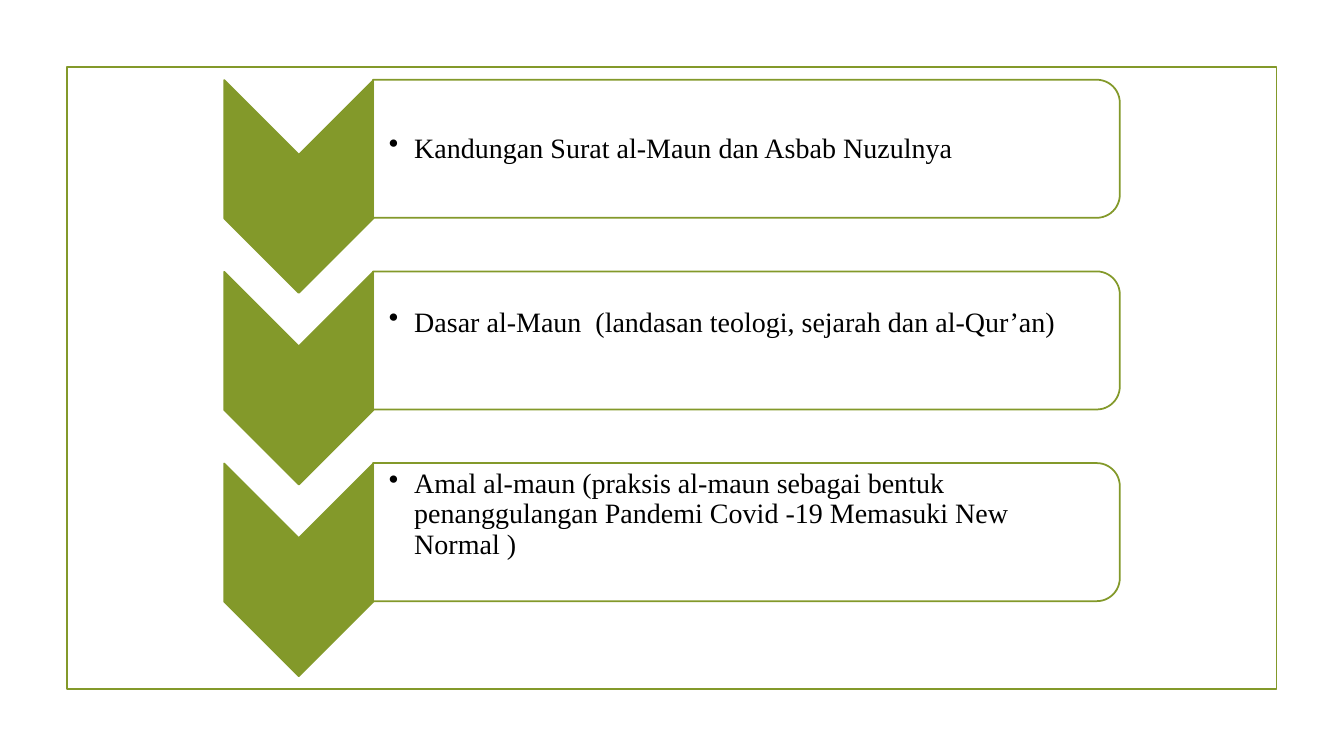
from lxml import etree
from pptx import Presentation
from pptx.dml.color import RGBColor
from pptx.enum.shapes import MSO_SHAPE
from pptx.enum.text import MSO_ANCHOR, PP_ALIGN
from pptx.oxml.ns import qn
from pptx.util import Cm, Pt

RECT = MSO_SHAPE.RECTANGLE
CHEVRON = MSO_SHAPE.CHEVRON
BAND = MSO_SHAPE.ROUND_2_SAME_RECTANGLE
MIDDLE = MSO_ANCHOR.MIDDLE
LEFT = PP_ALIGN.LEFT

GREEN, WHITE, BLACK = "83992A", "FFFFFF", "000000"
FONT = "Times New Roman"
PITCH = 4.83  # cm from one row to the next

# Text and bottom inset (cm) of each row
ROWS = [
    ("Kandungan Surat al-Maun dan Asbab Nuzulnya", 0.03),
    ("Dasar al-Maun  (landasan teologi, sejarah dan al-Qur’an)", 0.92),
    ("Amal al-maun (praksis al-maun sebagai bentuk penanggulangan "
     "Pandemi Covid -19 Memasuki New Normal )", 0.92),
]


def color(code):
    return RGBColor.from_string(code)


def add_box(slide, kind, x, y, w, h, fill=None, turn=0):
    """Add an outlined shape centred on x, y."""
    box = slide.shapes.add_shape(
        kind, Cm(x - w / 2), Cm(y - h / 2), Cm(w), Cm(h))
    box.rotation = turn
    box.shadow.inherit = False
    box.line.color.rgb = color(GREEN)
    box.line.width = Pt(1.25)
    if fill:
        box.fill.solid()
        box.fill.fore_color.rgb = color(fill)
    else:
        box.fill.background()
    return box


def set_alpha(shape, percent):
    tone = shape.fill._xPr.find(qn("a:solidFill"))[0]
    etree.SubElement(tone, qn("a:alpha"), val=str(percent * 1000))


def add_bullet(para):
    props = para._p.get_or_add_pPr()
    props.set("marL", str(Cm(0.64)))
    props.set("indent", str(-Cm(0.64)))
    etree.SubElement(props, qn("a:buChar"), char="•")


def add_label(slide, text, y, bottom):
    label = slide.shapes.add_textbox(Cm(9.4), Cm(y), Cm(18.64), Cm(3.15))
    frame = label.text_frame
    frame.word_wrap = True
    frame.vertical_anchor = MIDDLE
    frame.margin_left = Cm(0.4)
    frame.margin_top = frame.margin_right = Cm(0.03)
    frame.margin_bottom = Cm(bottom)
    frame.text = text
    para = frame.paragraphs[0]
    add_bullet(para)
    para.alignment = LEFT
    para.line_spacing = 0.9
    font = para.runs[0].font
    font.name = FONT
    font.size = Pt(20)
    font.color.rgb = color(BLACK)


def add_row(slide, text, bottom, shift):
    add_box(slide, CHEVRON, 7.53, 4.7 + shift, 5.36, 3.76, GREEN, 90)
    band = add_box(slide, BAND, 18.81, 3.75 + shift, 3.48, 18.82, WHITE, 90)
    set_alpha(band, 90)
    add_label(slide, text, 2.18 + shift, bottom)


def main():
    deck = Presentation()
    deck.slide_width, deck.slide_height = Cm(33.87), Cm(19.05)
    slide = deck.slides.add_slide(deck.slide_layouts[6])

    # Frame around the slide
    add_box(slide, RECT, 16.93, 9.53, 30.48, 15.67)

    # Three steps
    for i, (text, bottom) in enumerate(ROWS):
        add_row(slide, text, bottom, i * PITCH)

    deck.save("out.pptx")


if __name__ == "__main__":
    main()
